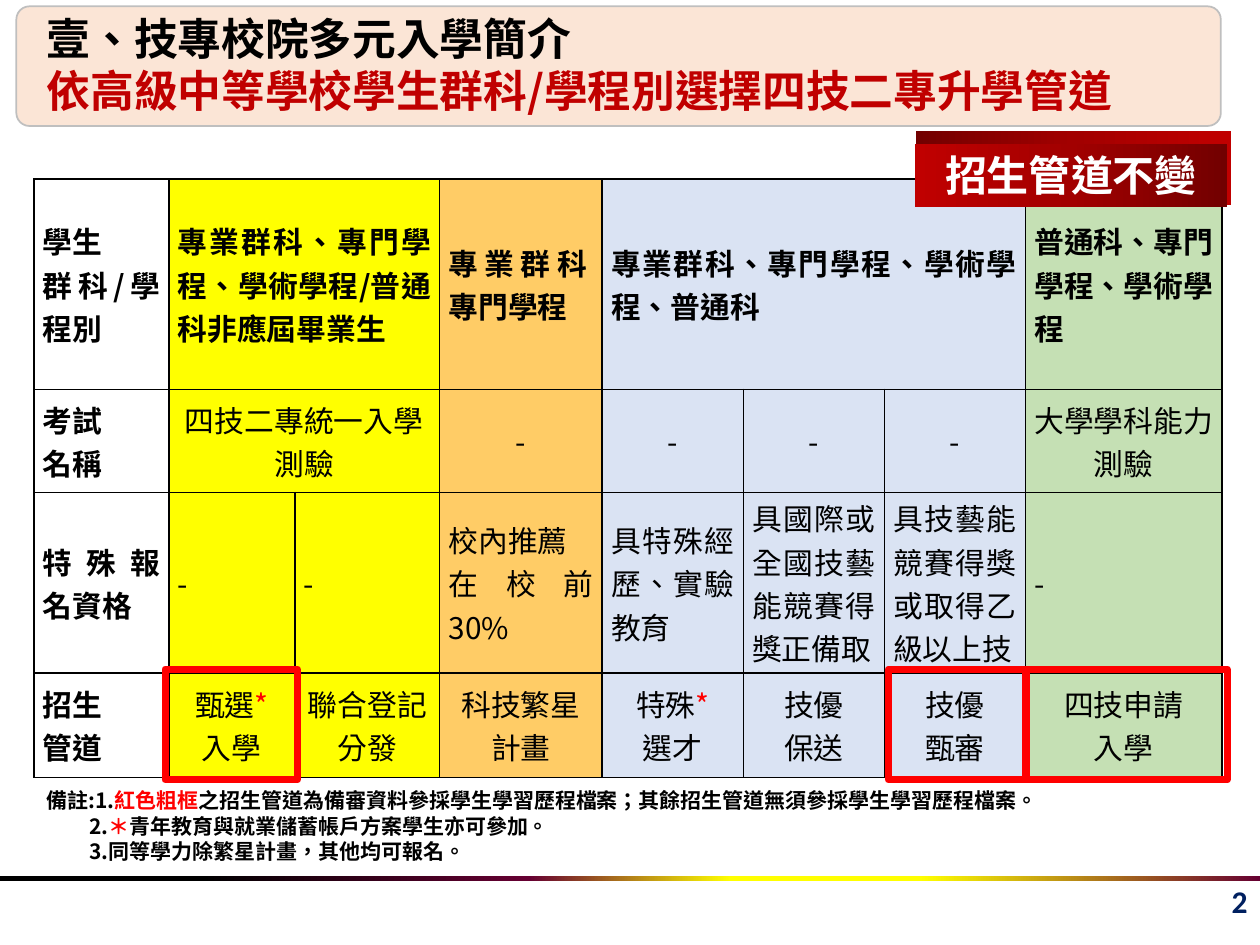
from dataclasses import dataclass
from typing import Optional

from lxml.etree import SubElement
from pptx import Presentation
from pptx.dml.color import RGBColor
from pptx.enum.lang import MSO_LANGUAGE_ID as Language
from pptx.enum.shapes import MSO_SHAPE as Shape
from pptx.enum.text import MSO_ANCHOR as Anchor, MSO_AUTO_SIZE as AutoSize, PP_ALIGN as Align
from pptx.oxml import parse_xml
from pptx.oxml.ns import nsdecls, qn
from pptx.util import Inches, Pt

CJK_FONT = "Noto Sans CJK SC"
BLACK = RGBColor(0x00, 0x00, 0x00)
WHITE = RGBColor(0xFF, 0xFF, 0xFF)
RED = RGBColor(0xFF, 0x00, 0x00)
DARK_RED = RGBColor(0xC0, 0x00, 0x00)
MID_RED = RGBColor(0xA2, 0x00, 0x00)
DEEP_RED = RGBColor(0x72, 0x00, 0x00)
NAVY = RGBColor(0x00, 0x20, 0x60)
PLUM = RGBColor(0x66, 0x00, 0x32)
YELLOW = RGBColor(0xFF, 0xFF, 0x00)
ORANGE = RGBColor(0xFF, 0xCC, 0x66)
BLUE = RGBColor(0xDA, 0xE3, 0xF3)
GREEN = RGBColor(0xC5, 0xE0, 0xB4)
PEACH = RGBColor(0xFB, 0xE5, 0xD6)
GRAY = RGBColor(0xBF, 0xBF, 0xBF)

COLUMN_WIDTHS = (1.07, 1, 1.15, 1.29, 1.12, 1.12, 1.12, 1.56)
ROW_HEIGHTS = (1.67, 0.82, 1.43, 0.83)
COLUMN_FILLS = (None, YELLOW, YELLOW, ORANGE, BLUE, BLUE, BLUE, GREEN)


@dataclass(frozen=True)
class Box:
    left: float
    top: float
    width: float
    height: float

    def lengths(self):
        return tuple(Inches(v) for v in (self.left, self.top, self.width, self.height))


@dataclass(frozen=True)
class Style:
    size: float
    color: RGBColor = BLACK
    bold: bool = True
    font: str = CJK_FONT


@dataclass(frozen=True)
class Entry:
    row: int
    column: int
    lines: tuple
    align: Align = Align.JUSTIFY
    span: int = 1


C, L = Align.CENTER, Align.LEFT
ENTRIES = (
    Entry(0, 0, ("學生", "群科/學程別")),
    Entry(0, 1, ("專業群科、專門學程、學術學程/普通科非應屆畢業生",), span=2),
    Entry(0, 3, ("專業群科、", "專門學程")),
    Entry(0, 4, ("專業群科、專門學程、學術學程、普通科",), span=3),
    Entry(0, 7, ("普通科、專門學程、學術學程",)),
    Entry(1, 0, ("考試", "名稱")),
    Entry(1, 1, ("四技二專統一入學測驗",), C, 2),
    *(Entry(1, column, ("-",), C) for column in range(3, 7)),
    Entry(1, 7, ("大學學科能力測驗",), C),
    Entry(2, 0, ("特殊報名資格",)),
    *(Entry(2, column, ("-",), L) for column in (1, 2, 7)),
    Entry(2, 3, ("校內推薦", "在校前30%")),
    Entry(2, 4, ("具特殊經歷、實驗教育",)),
    Entry(2, 5, ("具國際或全國技藝能競賽得獎正備取",)),
    Entry(2, 6, ("具技藝能競賽得獎或取得乙級以上技",)),
    Entry(3, 0, ("招生", "管道")),
    Entry(3, 1, ("甄選*", "入學"), C),
    Entry(3, 2, ("聯合登記分發",), C),
    Entry(3, 3, ("科技繁星計畫",), C),
    Entry(3, 4, ("特殊*", "選才"), C),
    Entry(3, 5, ("技優", "保送"), C),
    Entry(3, 6, ("技優", "甄審"), C),
    Entry(3, 7, ("四技申請", "入學"), C),
)
NOTES = (
    (0, (("備註:1.", BLACK), ("紅色粗框", RED),
         ("之招生管道為備審資料參採學生學習歷程檔案；其餘招生管道無須參採學生學習歷程檔案。", BLACK))),
    (0.34, (("2.", BLACK), ("＊", RED), ("青年教育與就業儲蓄帳戶方案學生亦可參加。", BLACK))),
    (0.34, (("3.同等學力除繁星計畫，其他均可報名。", BLACK),)),
)


def add_run(paragraph, text: str, style: Style) -> None:
    run = paragraph.add_run()
    run.text = text
    font = run.font
    font.size, font.bold, font.name = Pt(style.size), style.bold, style.font
    font.color.rgb = style.color
    font.language_id = Language.TRADITIONAL_CHINESE
    SubElement(font._element, qn("a:ea")).set("typeface", style.font)


def next_paragraph(frame, index: int, align: Align, spacing: Optional[float] = None):
    paragraph = frame.add_paragraph() if index else frame.paragraphs[0]
    paragraph.alignment = align
    paragraph.space_before = Pt(0)
    if spacing:
        paragraph.line_spacing = Pt(spacing)
    return paragraph


def prepare_frame(shape):
    frame = shape.text_frame
    frame.word_wrap = True
    frame.auto_size = AutoSize.NONE
    frame.vertical_anchor = Anchor.TOP
    return frame


def add_box(slide, box: Box, fill: Optional[RGBColor] = None, line: Optional[RGBColor] = None,
            line_width: float = 1, kind: Shape = Shape.RECTANGLE):
    shape = slide.shapes.add_shape(kind, *box.lengths())
    shape.shadow.inherit = False
    if fill is None:
        shape.fill.background()
    else:
        shape.fill.solid()
        shape.fill.fore_color.rgb = fill
    if line is None:
        shape.line.fill.background()
    else:
        shape.line.color.rgb = line
        shape.line.width = Pt(line_width)
    return shape


def add_gradient_box(slide, box: Box, stops: tuple):
    shape = add_box(slide, box)
    stop_xml = "".join(
        f'<a:gs pos="{position * 1000}"><a:srgbClr val="{color}"/></a:gs>' for position, color in stops)
    gradient = parse_xml(f'<a:gradFill {nsdecls("a")} rotWithShape="1"><a:gsLst>{stop_xml}</a:gsLst>'
                         '<a:lin ang="0" scaled="0"/></a:gradFill>')
    properties = shape._element.spPr
    properties.replace(properties.find(qn("a:noFill")), gradient)
    return shape


def add_borders(cell) -> None:
    properties = cell._tc.get_or_add_tcPr()
    for index, side in enumerate(("lnL", "lnR", "lnT", "lnB")):
        properties.insert(index, parse_xml(
            f'<a:{side} {nsdecls("a")} w="12700"><a:solidFill><a:srgbClr val="{BLACK}"/>'
            f'</a:solidFill></a:{side}>'))


def fill_cell(table, entry: Entry) -> None:
    cell = table.cell(entry.row, entry.column)
    if entry.span > 1:
        cell.merge(table.cell(entry.row, entry.column + entry.span - 1))
    bold = entry.row == 0 or entry.column == 0
    for index, line in enumerate(entry.lines):
        paragraph = next_paragraph(cell.text_frame, index, entry.align)
        text, star, _ = line.partition("*")
        add_run(paragraph, text, Style(17, bold=bold))
        if star:
            add_run(paragraph, star, Style(17, RED, bold))


def add_admission_table(slide) -> None:
    box = Box(0.27, 1.42, sum(COLUMN_WIDTHS), sum(ROW_HEIGHTS))
    table = slide.shapes.add_table(len(ROW_HEIGHTS), len(COLUMN_WIDTHS), *box.lengths()).table
    table.first_row = table.horz_banding = False
    for row, height in zip(table.rows, ROW_HEIGHTS):
        row.height = Inches(height)
        for cell, color in zip(row.cells, COLUMN_FILLS):
            cell.margin_left = cell.margin_right = Inches(0.07)
            cell.margin_top = cell.margin_bottom = 0
            cell.vertical_anchor = Anchor.MIDDLE
            if color is None:
                cell.fill.background()
            else:
                cell.fill.solid()
                cell.fill.fore_color.rgb = color
            add_borders(cell)
    for column, width in zip(table.columns, COLUMN_WIDTHS):
        column.width = Inches(width)
    for entry in ENTRIES:
        fill_cell(table, entry)


def add_title(slide) -> None:
    add_box(slide, Box(0.13, 0.05, 9.56, 0.95), PEACH, GRAY, 1,
            Shape.ROUNDED_RECTANGLE).adjustments[0] = 0.11
    title = slide.shapes.title
    title.left, title.top, title.width, title.height = Box(0.27, 0.04, 9.28, 0.94).lengths()
    frame = prepare_frame(title)
    lines = (("壹、技專校院多元入學簡介", BLACK), ("依高級中等學校學生群科/學程別選擇四技二專升學管道", DARK_RED))
    for index, (text, color) in enumerate(lines):
        add_run(next_paragraph(frame, index, L, 30), text, Style(25, color))
    slide.shapes._spTree.append(title._element)


def add_notes(slide) -> None:
    frame = prepare_frame(slide.shapes.add_textbox(*Box(0.27, 6.2, 9.66, 0.71).lengths()))
    for index, (indent, runs) in enumerate(NOTES):
        paragraph = next_paragraph(frame, index, L, 14.6)
        paragraph._p.get_or_add_pPr().set("marL", str(Inches(indent)))
        for text, color in runs:
            add_run(paragraph, text, Style(12, color))


def main() -> None:
    presentation = Presentation()
    presentation.slide_width, presentation.slide_height = Inches(10), Inches(7.5)
    slide = presentation.slides.add_slide(presentation.slide_layouts[5])
    add_gradient_box(slide, Box(0, 6.95, 10, 0.04), (
        (0, BLACK), (16, BLACK), (42, PLUM), (58, YELLOW), (73, YELLOW), (100, PLUM)))
    number = prepare_frame(slide.shapes.add_textbox(*Box(9.39, 6.95, 0.61, 0.4).lengths()))
    add_run(next_paragraph(number, 0, Align.RIGHT), "2", Style(18, NAVY, font="Calibri"))
    add_notes(slide)
    add_admission_table(slide)
    for left, width in ((1.31, 1.05), (7.05, 1.09), (8.15, 1.59)):
        add_box(slide, Box(left, 5.31, width, 0.88), line=RED, line_width=4)
    add_title(slide)
    reds = (DEEP_RED, MID_RED, DARK_RED)
    add_gradient_box(slide, Box(7.27, 1.04, 2.5, 0.59), tuple(zip((0, 50, 100), reds)))
    banner = add_gradient_box(slide, Box(7.26, 1.14, 2.48, 0.5), tuple(zip((0, 50, 100), reds[::-1])))
    add_run(next_paragraph(prepare_frame(banner), 0, C, 28.8), "招生管道不變", Style(24, WHITE))
    presentation.save("out.pptx")


if __name__ == "__main__":
    main()
